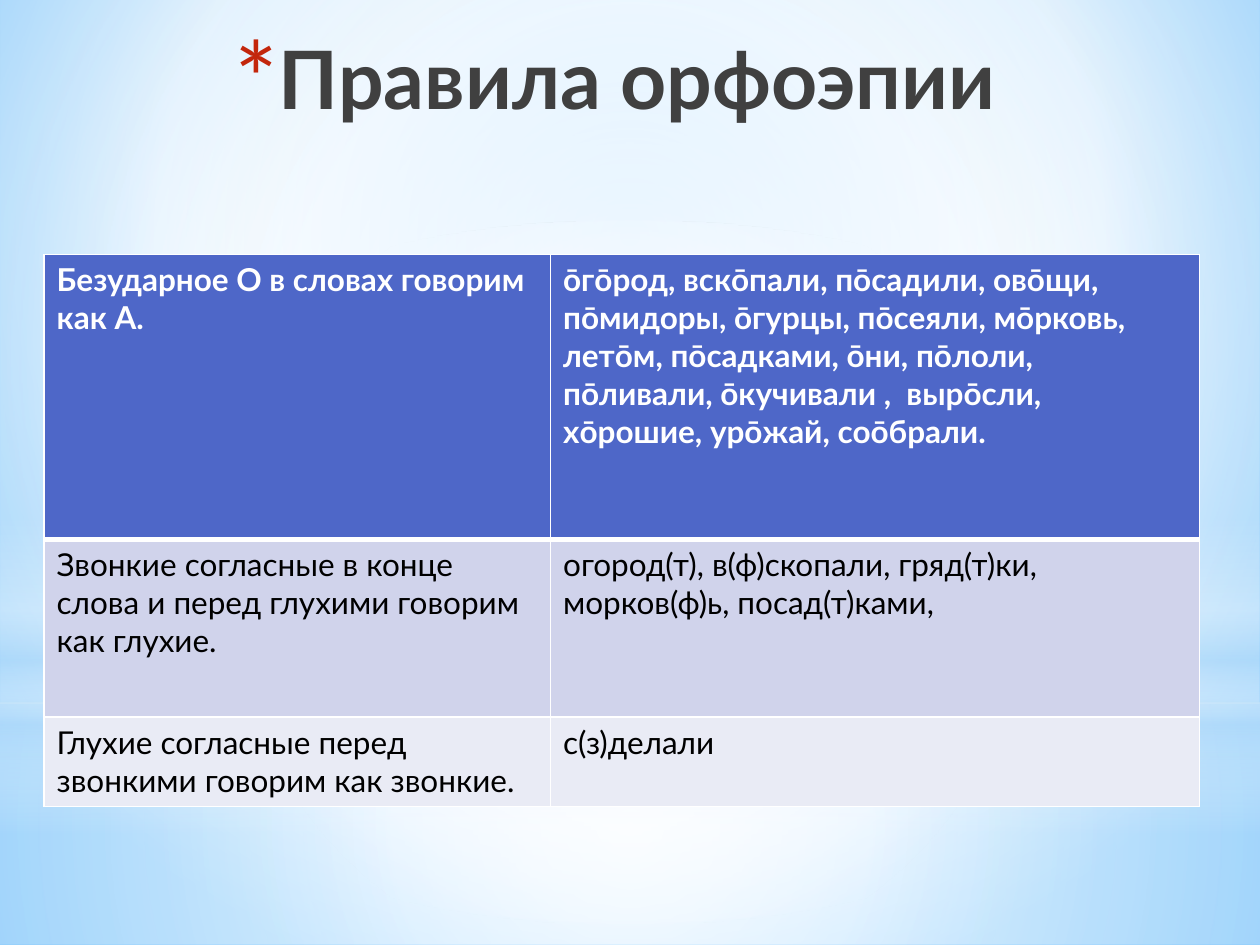
from lxml import etree
from pptx import Presentation
from pptx.dml.color import RGBColor
from pptx.enum import shapes, text
from pptx.oxml import ns
from pptx.util import Inches, Pt

CENTER = (50, 50, 50, 50)


def rgb(code):
    """Turn a hex string into a colour."""
    return RGBColor.from_string(code)


def node(up, tag, **attrs):
    """Add a DrawingML child element."""
    kid = etree.SubElement(up, ns.qn("a:" + tag))
    for key, val in attrs.items():
        kid.set(key, str(val))
    return kid


def blend(fill, home, stops, focus=None):
    """Give a fill a gradient, radial when it has a focus."""
    fill.solid()
    old = home.find(ns.qn("a:solidFill"))
    grad = etree.Element(ns.qn("a:gradFill"), rotWithShape="1")
    group = node(grad, "gsLst")
    for pos, code, *alpha in stops:
        stop = node(group, "gs", pos=pos * 1000)
        tint = node(stop, "srgbClr", val=code)
        for part in alpha:
            node(tint, "alpha", val=part * 1000)
    if focus:
        route = node(grad, "path", path="circle")
        sides = {side: val * 1000 for side, val in zip("ltrb", focus)}
        node(route, "fillToRect", **sides)
    else:
        node(grad, "lin", ang=90 * 60000, scaled=0)
    home.replace(old, grad)


def write(frame, words, size=18, bold=False, color="000000", align=text.PP_ALIGN.LEFT):
    """Put formatted words in a text frame."""
    frame.word_wrap = True
    para = frame.paragraphs[0]
    para.alignment = align
    run = para.add_run()
    run.text = words
    run.font.name = "Lato"
    run.font.size = Pt(size)
    run.font.bold = bold
    run.font.color.rgb = rgb(color)
    return para, run


class Deck:
    """Hold the style and the current slide."""

    line = "FFFFFF"
    ink = "404040"
    mark = "C3260C"

    def __init__(self):
        """Start a deck with one title-only slide."""
        self.prs = Presentation()
        self.prs.slide_width = Inches(10)
        self.prs.slide_height = Inches(7.5)
        self.slide = self.prs.slides.add_slide(self.prs.slide_layouts[5])

    def back(self, stops, focus):
        """Fill the background."""
        fill = self.slide.background.fill
        fill.solid()
        home = self.slide.element.find(".//" + ns.qn("p:bgPr"))
        blend(fill, home, stops, focus)

    def glow(self, kind, top, height, stops, focus=None):
        """Add a full-width band of soft light."""
        shape = self.slide.shapes.add_shape(
            kind, 0, Inches(top), self.prs.slide_width, Inches(height))
        shape.shadow.inherit = False
        shape.line.fill.background()
        blend(shape.fill, shape.element.spPr, stops, focus)

    def title(self, words, left, top, width, height):
        """Place the title with its star bullet in front of the light."""
        shape = self.slide.shapes.title
        shape.left, shape.top = Inches(left), Inches(top)
        shape.width, shape.height = Inches(width), Inches(height)
        frame = shape.text_frame
        frame.auto_size = text.MSO_AUTO_SIZE.NONE
        frame.vertical_anchor = text.MSO_ANCHOR.TOP
        para, run = write(frame, words, size=46, bold=True, color=self.ink,
                          align=text.PP_ALIGN.RIGHT)
        para.space_before = Pt(0)
        blend(run.font.fill, run.font._element,
              [(0, "000000"), (40, self.ink), (100, "212745", 65)])
        props = para._p.get_or_add_pPr()
        props.set("marL", str(Inches(0.35)))
        props.set("indent", str(-Inches(0.35)))
        node(node(props, "buClr"), "srgbClr", val=self.mark)
        node(props, "buSzPct", val=128000)
        node(props, "buFont", typeface="Lato")
        node(props, "buChar", char="*")
        self.slide.shapes.element.append(shape.element)

    def edge(self, cell, **widths):
        """Draw the four borders of a cell."""
        props = cell._tc.get_or_add_tcPr()
        for spot, side in enumerate("LRTB"):
            rule = node(props, "ln" + side, w=Pt(widths.get(side, 1)))
            node(node(rule, "solidFill"), "srgbClr", val=self.line)
            props.insert(spot, rule)

    def table(self, rows, left, top, cols, highs, fills):
        """Add a table with a bold first row."""
        grid = self.slide.shapes.add_table(
            len(rows), len(cols), Inches(left), Inches(top),
            Inches(sum(cols)), Inches(sum(highs))).table
        for col, width in zip(grid.columns, cols):
            col.width = Inches(width)
        for num, (row, high, fill) in enumerate(zip(rows, highs, fills)):
            grid.rows[num].height = Inches(high)
            head = num == 0
            for cell, words in zip(grid.rows[num].cells, row):
                write(cell.text_frame, words, bold=head,
                      color="FFFFFF" if head else "000000")
                cell.fill.solid()
                cell.fill.fore_color.rgb = rgb(fill)
                self.edge(cell, B=3 if head else 1, T=3 if num == 1 else 1)


def main():
    """Build the slide of pronunciation rules."""
    deck = Deck()
    rect, oval = shapes.MSO_SHAPE.RECTANGLE, shapes.MSO_SHAPE.OVAL
    deck.back([(0, "9ED5FF"), (60, "FFFFFF"), (100, "5BB9FF")], (20, 10, 20, 60))
    deck.glow(rect, 5.58, 1.92,
              [(0, "FFFFFF", 91), (37, "FFFFFF", 76), (100, "B4DCFA", 79)], CENTER)
    deck.glow(rect, 0, 5.58,
              [(0, "FFFFFF", 89), (48, "FFFFFF", 62), (100, "B4DCFA", 79)], CENTER)
    deck.glow(rect, 4.12, 2.5,
              [(0, "FFFFFF", 0), (29, "FFFFFF", 30), (45, "B4DCFA", 40),
               (55, "FFFFFF", 26), (65, "B4DCFA", 60), (100, "FFFFFF", 0)])
    deck.glow(oval, 1.75, 5.58, [(0, "FFFFFF"), (56, "FFFFFF", 0)], CENTER)
    deck.title("Правила орфоэпии", 0.88, 0.18, 7.12, 1.25)
    rules = [
        ("Безударное О в словах говорим как А.",
         "ōгōрод, вскōпали, пōсадили, овōщи, пōмидоры, ōгурцы, пōсеяли, "
         "мōрковь, летōм, пōсадками, ōни, пōлоли, пōливали, ōкучивали ,  "
         "вырōсли, хōрошие, урōжай, соōбрали."),
        ("Звонкие согласные в конце слова и перед глухими говорим как глухие.",
         "огород(т), в(ф)скопали, гряд(т)ки, морков(ф)ь, посад(т)ками,"),
        ("Глухие согласные перед звонкими говорим как звонкие.", "с(з)делали"),
    ]
    deck.table(rules, 0.35, 2.02, (4.02, 5.15), (2.26, 1.41, 0.71),
               ("4E67C8", "D0D3EB", "E9EBF5"))
    deck.prs.save("out.pptx")


if __name__ == "__main__":
    main()
